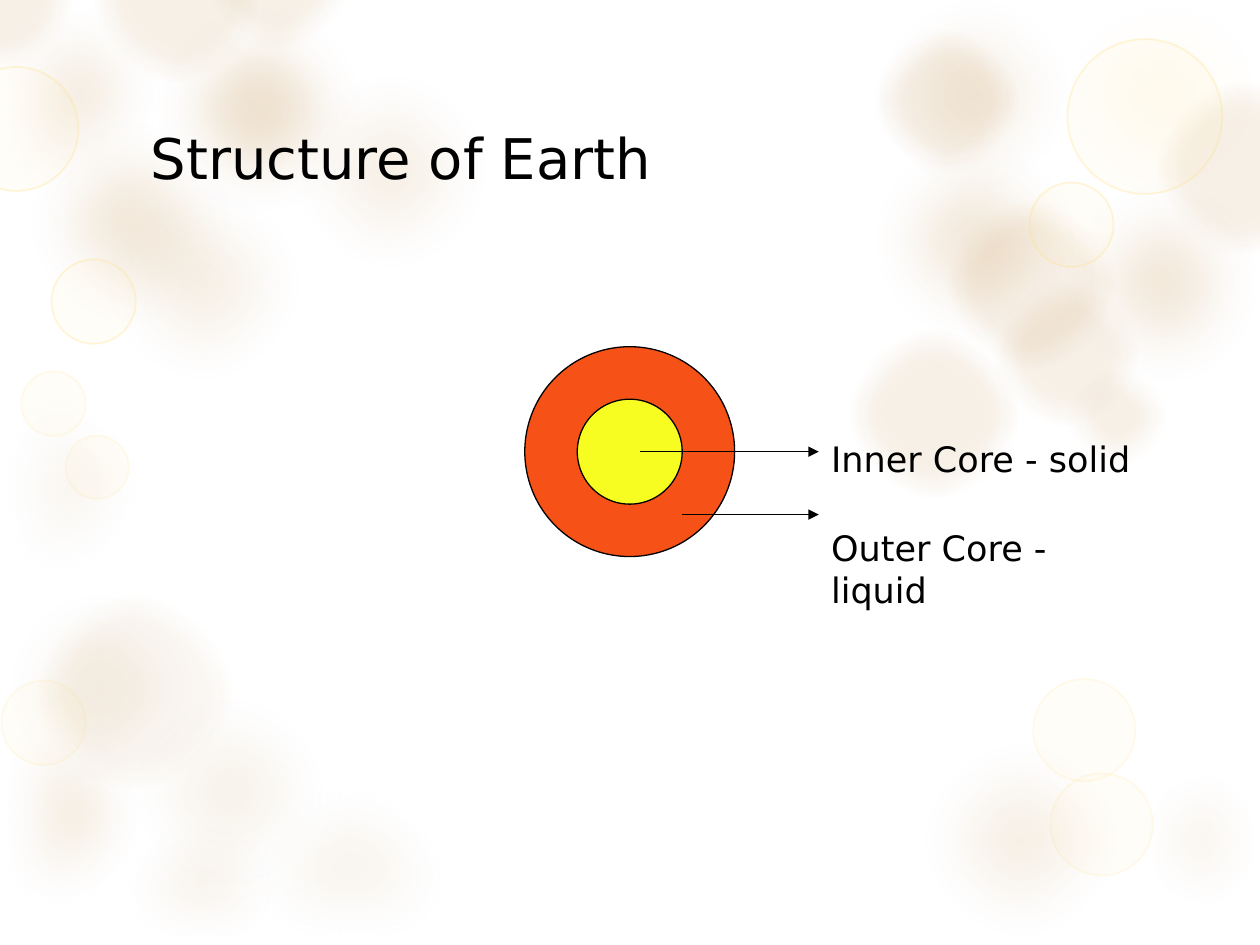
from math import cos, pi, sin

from pptx import Presentation
from pptx.dml.color import RGBColor
from pptx.enum.shapes import MSO_CONNECTOR as Connector, MSO_SHAPE as Shape
from pptx.enum.text import MSO_ANCHOR as Anchor
from pptx.oxml.ns import qn
from pptx.util import Cm, Pt
from lxml.etree import SubElement

BLACK = RGBColor(0x00, 0x00, 0x00)
BROWN = RGBColor(0xAE, 0x6D, 0x11)
TAN = RGBColor(0xF1, 0xBD, 0x74)
GOLD = RGBColor(0xFF, 0xE2, 0x81)
ORANGE = RGBColor(0xF6, 0x52, 0x18)
YELLOW = RGBColor(0xF8, 0xFD, 0x21)
FONT = "DejaVu Sans"
WIDTH, HEIGHT = 25.4, 19.05
BLEED = 0.19  # how far a trimmed bubble reaches past the slide edge
TRIM = True

# Bubbles: centre x, centre y, diameter, fill opacity, trimmed at the edge
BLOBS = [
    (2, 13.88, 5.3, 8, TRIM), (4.1, 5.7, 5.3, 10), (7.86, 3.44, 5.3, 10),
    (4.1, 18.57, 5.3, 16, TRIM), (1.24, 1.83, 5.3, 14, TRIM), (5.22, 2.2, 5.3, 20),
    (2.65, 4.48, 5.3, 15), (19.65, 1.92, 5.3, 10), (23.48, 5.7, 5.3, 15, TRIM),
    (25.03, 16.93, 5.3, 16, TRIM), (0.91, 16.4, 5.3, 16, TRIM),
    (4.61, 15.96, 5.3, 8), (19.65, 4.84, 5.3, 15), (20.59, 16.93, 5.3, 10),
    (7.06, 17.79, 5.3, 8, TRIM), (0.89, 9.82, 5.3, 8, TRIM),
]
GLOW = [(23.48, 1.83, 5.3, 10, TRIM)]
SPOTS = [
    (25.06, 3.39, 3.48, 10), (19.08, 2.03, 2.9, 10), (20.79, 5.73, 3.38, 10),
    (21.49, 7.14, 2.9, 10), (22.52, 8.39, 2, 10), (3.56, 0, 3.3, 10),
    (5.61, -0.46, 2.9, 10), (0, -0.03, 2.9, 10), (2.71, 13.96, 3.89, 6),
    (18.83, 8.34, 3.38, 10),
]
FAINT_RINGS = [
    (0.88, 14.57, 1.7, 5), (22.21, 16.62, 2.06, 5), (21.86, 14.72, 2.06, 5),
    (1.08, 8.14, 1.3, 5), (1.96, 9.42, 1.27, 5),
]
RINGS = [
    (0.33, 2.6, 2.5, 5), (1.89, 6.08, 1.7, 5),
    (23.08, 2.35, 3.12, 5), (21.6, 4.53, 1.7, 5),
]

# Families: bubbles, fill, soft edge (pt), then line colour, width and opacity
FAMILIES = [
    (BLOBS, BROWN, 32, None), (GLOW, GOLD, 32, None),
    (SPOTS, BROWN, 12, (TAN, 14, 6)),
    (FAINT_RINGS, GOLD, 0, (GOLD, 1, 15)), (RINGS, GOLD, 0, (GOLD, 1, 30)),
]


def set_opacity(fill_parent, percent):
    color = fill_parent.find(qn("a:solidFill"))[0]
    SubElement(color, qn("a:alpha"), val=str(percent * 1000))


def paint(shape, fill):
    shape.shadow.inherit = False
    shape.fill.solid()
    shape.fill.fore_color.rgb = fill


def set_line(shape, color, width):
    shape.line.color.rgb = color
    shape.line.width = Pt(width)


def add_circle(slide, x, y, size, fill):
    """Place a circle by its centre."""
    circle = slide.shapes.add_shape(
        Shape.OVAL, Cm(x - size / 2), Cm(y - size / 2), Cm(size), Cm(size))
    paint(circle, fill)
    return circle


def add_trimmed_circle(slide, x, y, size, fill):
    """Outline a circle whose points stay within the bleed of the slide."""
    def within(value, limit):
        return Cm(min(max(value, -BLEED), limit + BLEED))

    angles = [pi * step / 18 for step in range(36)]
    points = [(within(x + size / 2 * cos(a), WIDTH),
               within(y + size / 2 * sin(a), HEIGHT)) for a in angles]
    outline = slide.shapes.build_freeform(*points[0])
    outline.add_line_segments(points[1:], close=True)
    circle = outline.convert_to_shape()
    paint(circle, fill)
    return circle


def add_bubble(slide, x, y, size, opacity, trimmed=False, *, fill, soft, line):
    add = add_trimmed_circle if trimmed else add_circle
    bubble = add(slide, x, y, size, fill)
    properties = bubble._element.spPr
    set_opacity(properties, opacity)
    if line:
        color, width, line_opacity = line
        set_line(bubble, color, width)
        set_opacity(properties.find(qn("a:ln")), line_opacity)
    else:
        bubble.line.fill.background()
    if soft:
        effects = properties.find(qn("a:effectLst"))
        SubElement(effects, qn("a:softEdge"), rad=str(Pt(soft)))


def add_text(slide, text, x, y, width, height, *, size, anchor=Anchor.TOP):
    box = slide.shapes.add_textbox(Cm(x), Cm(y), Cm(width), Cm(height))
    frame = box.text_frame
    frame.word_wrap = True
    frame.vertical_anchor = anchor
    paragraph = frame.paragraphs[0]
    paragraph.text = text
    paragraph.font.name = FONT
    paragraph.font.size = Pt(size)
    paragraph.font.color.rgb = BLACK


def add_arrow(slide, start, end, y):
    arrow = slide.shapes.add_connector(
        Connector.STRAIGHT, Cm(start), Cm(y), Cm(end), Cm(y))
    set_line(arrow, BLACK, 0.75)
    properties = arrow._element.spPr
    SubElement(properties.find(qn("a:ln")), qn("a:tailEnd"), type="triangle")
    SubElement(properties, qn("a:effectLst"))


def draw_backdrop(slide):
    for bubbles, fill, soft, line in FAMILIES:
        for bubble in bubbles:
            add_bubble(slide, *bubble, fill=fill, soft=soft, line=line)


def draw_core(slide, left, top, size):
    """Draw the two cores in a square box, with their labels to the right."""
    x, y = left + size / 2, top + size / 2
    for diameter, fill in ((size, ORANGE), (size / 2, YELLOW)):
        set_line(add_circle(slide, x, y, diameter, fill), BLACK, 0.75)

    # Label, arrow start and height, label top and width
    labels = [
        ("Inner Core - solid", x + 0.21, y, y - 0.42, 6.56),
        ("Outer Core - liquid", x + size / 4, y + 0.3 * size, y + 1.39, 6.77),
    ]
    label_left = x + 3.81
    for text, start, arrow_y, text_y, width in labels:
        add_arrow(slide, start, label_left, arrow_y)
        add_text(slide, text, label_left, text_y, width, 1.1, size=20)


def main():
    deck = Presentation()
    deck.slide_width, deck.slide_height = Cm(WIDTH), Cm(HEIGHT)
    slide = deck.slides.add_slide(deck.slide_layouts[6])
    draw_backdrop(slide)
    draw_core(slide, 10.58, 6.99, 4.23)
    add_text(slide, "Structure of Earth", 2.79, 1.88, 19.79, 2.57,
             size=32, anchor=Anchor.MIDDLE)
    deck.save("out.pptx")


if __name__ == "__main__":
    main()
